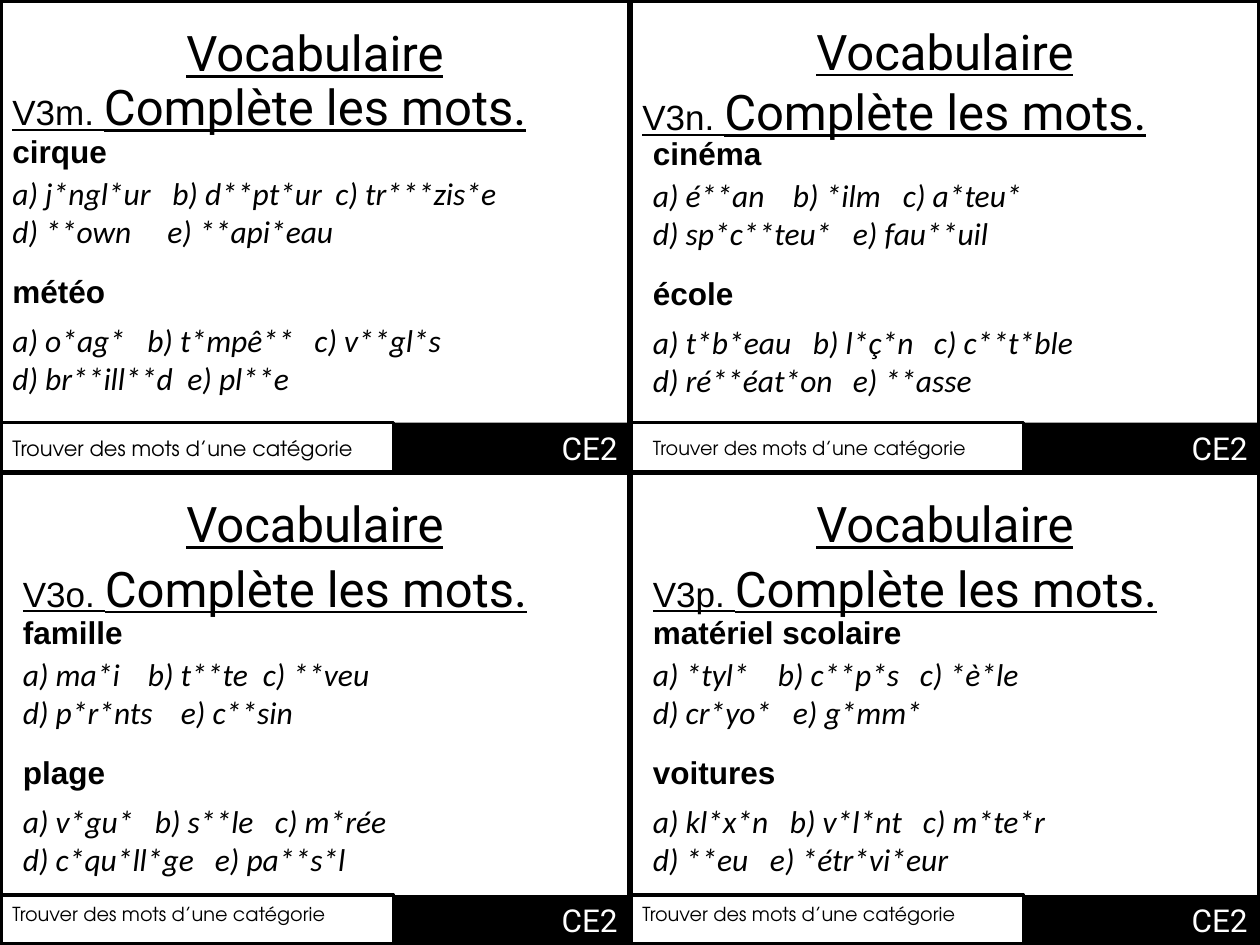
import pptx
import pptx.util
import pptx.dml.color
import pptx.enum.shapes
import pptx.enum.text
import lxml.etree

Pt = pptx.util.Pt
RECT = pptx.enum.shapes.MSO_SHAPE.RECTANGLE
ALIGN = pptx.enum.text.PP_ALIGN
ANCHOR = pptx.enum.text.MSO_ANCHOR
BLACK = pptx.dml.color.RGBColor(0x00, 0x00, 0x00)
WHITE = pptx.dml.color.RGBColor(0xFF, 0xFF, 0xFF)

CARD_W, CARD_H = 360, 270
FOOT_W, FOOT_Y = 225, 241.5
FOOT_H = CARD_H - FOOT_Y

CARDS = [
    dict(code="V3m. ", title_y=9.4, head=(0, 40.3), body=(0, 72), foot=(0, 245.5, 12), words=[
        ("cirque", [("a) j*ngl*ur\tb) d**pt*ur\tc) tr***zis*e", (91.4, 184.6)),
                    ("d) **own\te) **api*eau", (88.6,))]),
        ("météo", [("a) o*ag*\tb) t*mpê**\tc) v**gl*s", (77.1, 172.6)),
                   ("d) br**ill**d\te) pl**e", (100,))])]),
    dict(code="V3n. ", title_y=8.6, head=(0, 43.2), body=(6, 73), foot=(6, 245.5, 11), words=[
        ("cinéma", [("a) é**an\tb) *ilm\tc) a*teu*", (80, 142.9)),
                    ("d) sp*c**teu*\te) fau**uil", (114.3,))]),
        ("école", [("a) t*b*eau\tb) l*ç*n\tc) c**t*ble", (91.4, 160.6)),
                   ("d) ré**éat*on\te) **asse", (114.3,))])]),
    dict(code="V3o. ", title_y=8.6, head=(6, 45.4), body=(6, 77), foot=(0, 242, 11), words=[
        ("famille", [("a) ma*i\tb) t**te\tc) **veu", (71.4, 137.1)),
                     ("d) p*r*nts\te) c**sin", (90.3,))]),
        ("plage", [("a) v*gu*\tb) s**le\tc) m*rée", (75.4, 144)),
                   ("d) c*qu*ll*ge\te) pa**s*l", (109.7,))])]),
    dict(code="V3p. ", title_y=8.6, head=(6, 45.4), body=(6, 77), foot=(0, 242, 11), words=[
        ("matériel scolaire", [("a) *tyl*\tb) c**p*s\tc) *è*le", (71.4, 152.6)),
                               ("d) cr*yo*\te) g*mm*", (80,))]),
        ("voitures", [("a) kl*x*n\tb) v*l*nt\tc) m*te*r", (78.3, 154.3)),
                      ("d) **eu\te) *étr*vi*eur", (66.9,))])]),
]

prs = pptx.Presentation()
prs.slide_width, prs.slide_height = Pt(2 * CARD_W), Pt(2 * CARD_H)
s = prs.slides.add_slide(prs.slide_layouts[5])


def add_box(x, y, w, h, fill=None, line=None):
    sp = s.shapes.add_shape(RECT, Pt(x), Pt(y), Pt(w), Pt(h))
    sp.shadow.inherit = False
    if fill is None:
        sp.fill.background()
    else:
        sp.fill.solid()
        sp.fill.fore_color.rgb = fill
    if line is None:
        sp.line.fill.background()
    else:
        sp.line.color.rgb = BLACK
        sp.line.width = Pt(line)
    return sp


def write(sp, paragraphs, color=BLACK, align=ALIGN.LEFT, **style):
    tf = sp.text_frame
    tf.word_wrap = True
    tf.auto_size = pptx.enum.text.MSO_AUTO_SIZE.NONE
    tf.vertical_anchor = ANCHOR.TOP
    for i, (runs, stops) in enumerate(paragraphs):
        p = tf.paragraphs[0] if i == 0 else tf.add_paragraph()
        p.alignment = align
        if stops:
            pPr = p._p.get_or_add_pPr()
            tabs = lxml.etree.SubElement(pPr, pptx.oxml.ns.qn("a:tabLst"))
            for stop in stops:
                lxml.etree.SubElement(tabs, pptx.oxml.ns.qn("a:tab"), pos=str(int(Pt(stop))), algn="l")
        for text, font, size in runs:
            r = p.add_run()
            r.text = text
            r.font.name, r.font.size = font, Pt(size)
            r.font.color.rgb = color
            for name, value in style.items():
                setattr(r.font, name, value)


for i, card in enumerate(CARDS):
    x, y = i % 2 * CARD_W, i // 2 * CARD_H
    add_box(x, y, CARD_W, CARD_H, line=3)

    if i == 0:
        sp = s.shapes.title
        sp.left, sp.top = Pt(x), Pt(y + card["title_y"])
        sp.width, sp.height = Pt(CARD_W), Pt(41)
    else:
        sp = s.shapes.add_textbox(Pt(x), Pt(y + card["title_y"]), Pt(CARD_W), Pt(41))
    write(sp, [([("Vocabulaire", "Roboto", 28)], ())], align=ALIGN.CENTER, underline=True)

    head_x, head_y = card["head"]
    sp = s.shapes.add_textbox(Pt(x + head_x), Pt(y + head_y), Pt(354), Pt(41))
    write(sp, [([(card["code"], "Arial", 20), ("Complète les mots.", "Roboto", 28)], ())], underline=True)

    body_x, body_y = card["body"]
    for (word, lines), word_dy, list_dy in zip(card["words"], (0, 80), (24, 108)):
        sp = s.shapes.add_textbox(Pt(x + body_x), Pt(y + body_y + word_dy), Pt(270), Pt(29))
        write(sp, [([(word, "Arial", 18)], ())], bold=True)
        sp = s.shapes.add_textbox(Pt(x + body_x), Pt(y + body_y + list_dy), Pt(315), Pt(51))
        write(sp, [([(text, "Calibri", 18)], stops) for text, stops in lines], italic=True)

    sp = add_box(x + FOOT_W, y + FOOT_Y, CARD_W - FOOT_W, FOOT_H, fill=BLACK)
    write(sp, [([("CE2", "Roboto", 18)], ())], color=WHITE, align=ALIGN.RIGHT)
    add_box(x, y + FOOT_Y, FOOT_W, FOOT_H, line=2)
    foot_x, foot_y, size = card["foot"]
    sp = s.shapes.add_textbox(Pt(x + foot_x), Pt(y + foot_y), Pt(FOOT_W), Pt(21))
    write(sp, [([("Trouver des mots d’une catégorie", "TeX Gyre Adventor", size)], ())])

prs.save("out.pptx")
